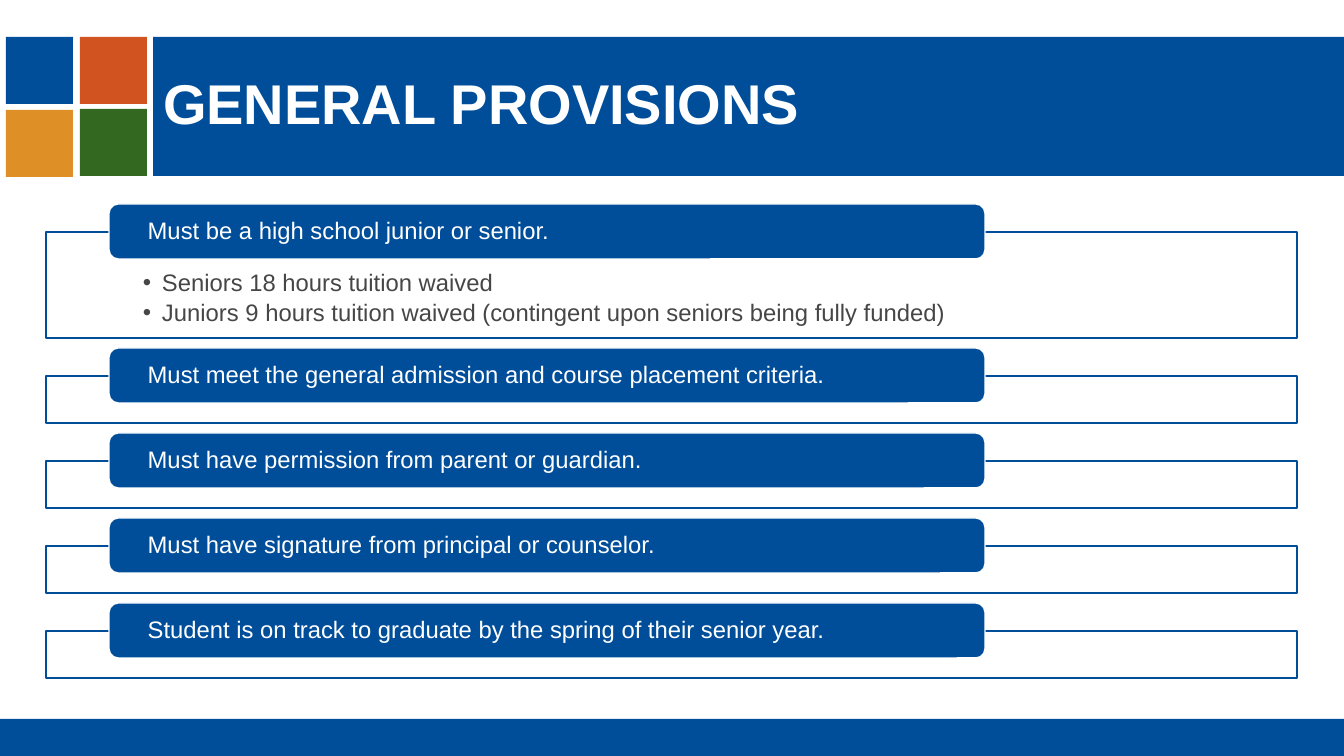
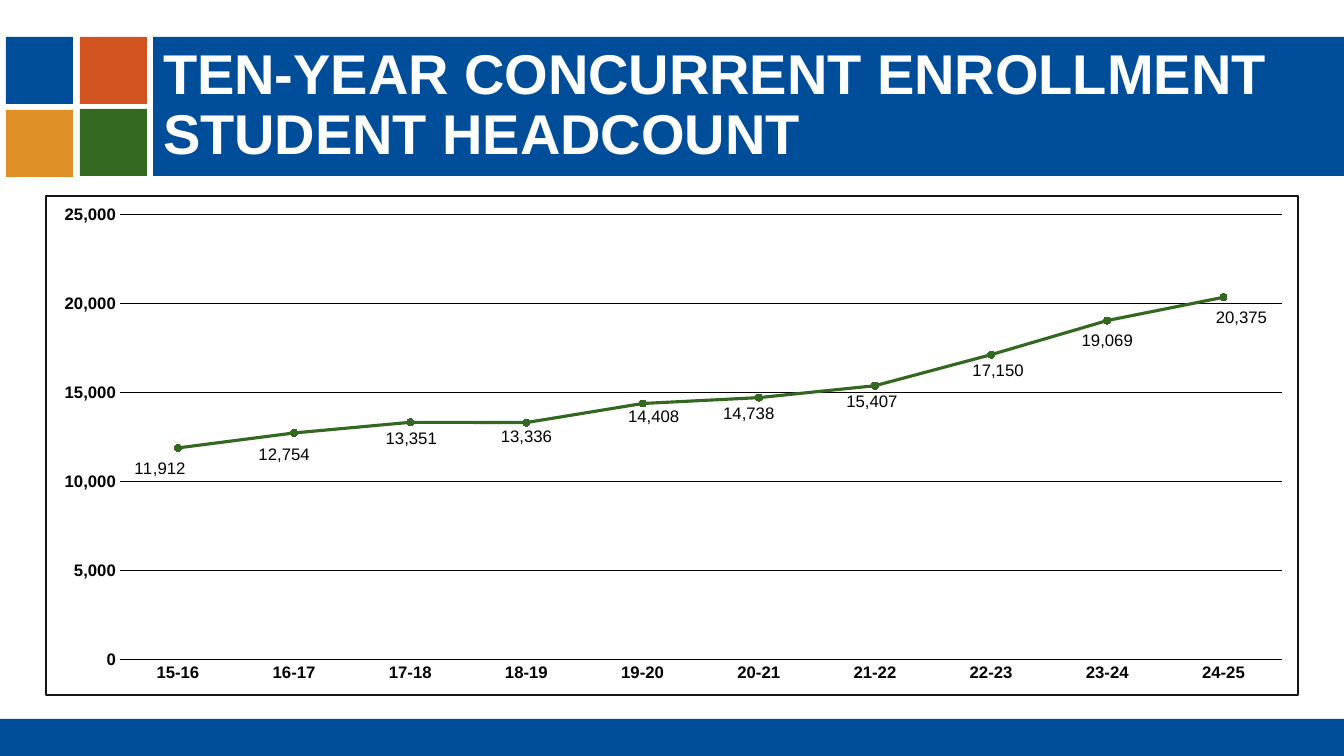
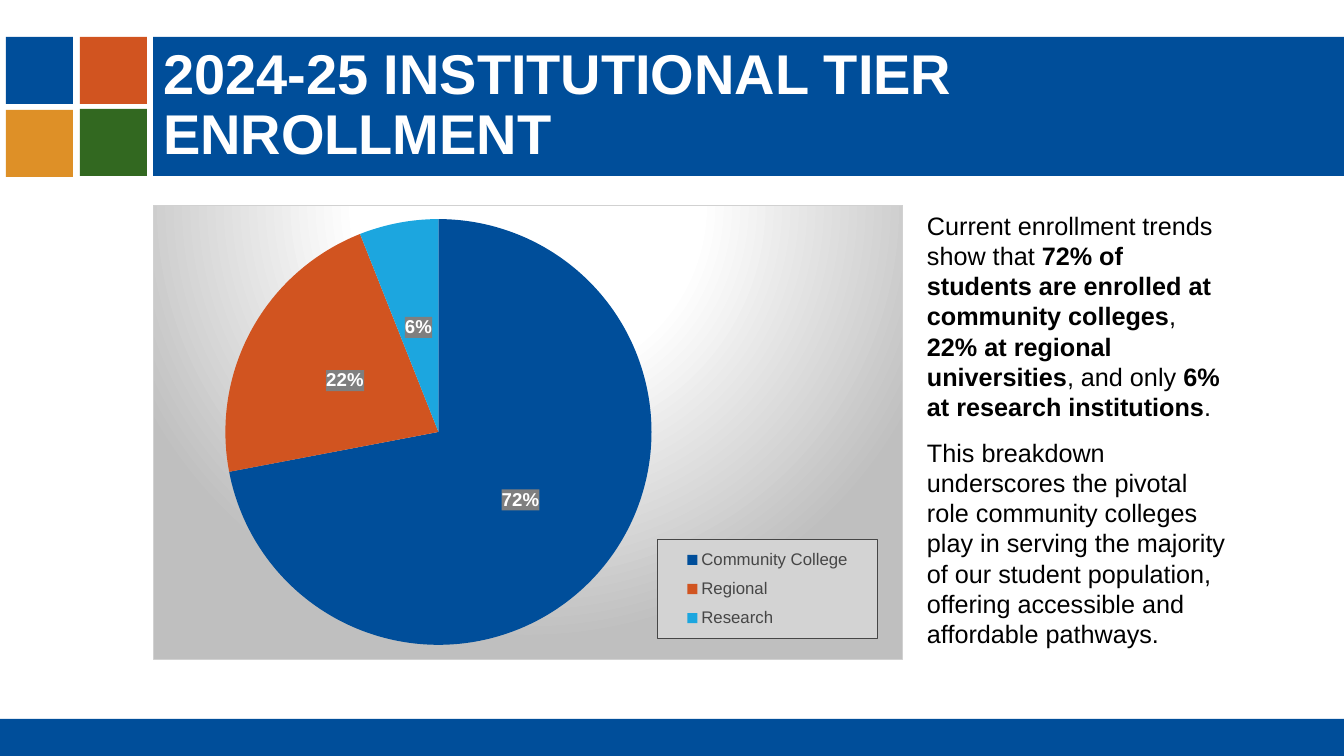
from pptx import Presentation
from pptx import util as u
from pptx.chart.data import CategoryChartData
from pptx.dml.color import RGBColor
from pptx.enum import chart as charts, shapes, text
from pptx.oxml import parse_xml
from pptx.oxml.ns import nsdecls, qn

PX = 9072  # EMU in one px; the slide is 1344 px wide
BLUE, ORANGE, GOLD, GREEN, SKY = "004E9A", "D15420", "DE9027", "326820", "1CA6DF"
WHITE, BLACK, GREY = "FFFFFF", "000000", "464646"
FONT = "Arial"
color = RGBColor.from_string


def paint(shape, fill, line=None):
    shape.shadow.inherit = False
    shape.fill.solid()
    shape.fill.fore_color.rgb = color(fill)
    if line:
        shape.line.color.rgb = color(line)
        shape.line.width = u.Pt(1)
    else:
        shape.line.fill.background()


def write(frame, *paragraphs, size, ink, bold=False, spacing=1.0, gap=0, indent=0,
          margins=(10, 5, 10, 5), anchor=text.MSO_ANCHOR.TOP):
    """Fill a text frame; ** in a paragraph switches bold on and off."""
    frame.word_wrap = True
    frame.auto_size = text.MSO_AUTO_SIZE.NONE
    frame.vertical_anchor = anchor
    (frame.margin_left, frame.margin_top,
     frame.margin_right, frame.margin_bottom) = [side * PX for side in margins]
    for number, content in enumerate(paragraphs):
        paragraph = frame.add_paragraph() if number else frame.paragraphs[0]
        if indent:
            properties = paragraph._p.get_or_add_pPr()
            properties.set("marL", str(indent * PX))
            properties.set("indent", str(-indent * PX))
        paragraph.alignment = text.PP_ALIGN.LEFT
        paragraph.line_spacing = spacing
        paragraph.space_before = u.Pt(gap if number else 0)
        for part, words in enumerate(content.split("**")):
            run = paragraph.add_run()
            run.text = words
            run.font.name, run.font.size = FONT, u.Pt(size)
            run.font.bold = bold or part % 2 == 1
            run.font.color.rgb = color(ink)


presentation = Presentation()
presentation.slide_width, presentation.slide_height = 1344 * PX, 756 * PX
master = presentation.slide_master
content_layout, title_layout = presentation.slide_layouts[1], presentation.slide_layouts[5]

# Slides and titles
slides = []
for layout, heading in (
    (content_layout, "GENERAL PROVISIONS"),
    (title_layout, "TEN-YEAR CONCURRENT ENROLLMENT STUDENT HEADCOUNT"),
    (title_layout, "2024-25 INSTITUTIONAL TIER ENROLLMENT"),
):
    slide = presentation.slides.add_slide(layout)
    title = slide.shapes.title
    title.left, title.top, title.width, title.height = 153 * PX, 37 * PX, 1191 * PX, 139 * PX
    paint(title, BLUE)
    write(title.text_frame, heading, size=40, ink=WHITE, bold=True, spacing=0.9,
          anchor=text.MSO_ANCHOR.MIDDLE)
    slides.append(slide)
provisions_slide, headcount_slide, tier_slide = slides

# Squares and footer band, moved to the master
for left, top, width, height, fill in (
    (6, 37, 67, 67, BLUE),
    (80, 37, 67, 67, ORANGE),
    (6, 110, 67, 67, GOLD),
    (80, 109, 67, 67, GREEN),
    (0, 719, 1344, 37, BLUE),
):
    block = provisions_slide.shapes.add_shape(
        shapes.MSO_SHAPE.RECTANGLE, left * PX, top * PX, width * PX, height * PX)
    paint(block, fill)
    master.shapes.element.append(block.element)

# General provisions: a bar on the top edge of each panel
bar_top = 204
for number, provision in enumerate((
    "Must be a high school junior or senior.",
    "Must meet the general admission and course placement criteria.",
    "Must have permission from parent or guardian.",
    "Must have signature from principal or counselor.",
    "Student is on track to graduate by the spring of their senior year.",
)):
    panel_top, panel_height = bar_top + 28, 47 if number else 106
    if number:
        panel = provisions_slide.shapes.add_shape(shapes.MSO_SHAPE.RECTANGLE, 0, 0, 0, 0)
    else:
        panel = provisions_slide.placeholders[1]
        write(panel.text_frame, "Seniors 18 hours tuition waived",
              "Juniors 9 hours tuition waived (contingent upon seniors being fully funded)",
              size=17, ink=GREY, spacing=0.9, gap=3, indent=19, margins=(97, 39, 97, 13))
    panel.left, panel.top = 46 * PX, panel_top * PX
    panel.width, panel.height = 1251 * PX, panel_height * PX
    paint(panel, WHITE, BLUE)
    bar = provisions_slide.shapes.add_shape(
        shapes.MSO_SHAPE.ROUNDED_RECTANGLE, 109 * PX, bar_top * PX, 876 * PX, 55 * PX)
    paint(bar, BLUE, WHITE)
    write(bar.text_frame, provision, size=17, ink=WHITE, spacing=0.9,
          margins=(36, 0, 36, 0), anchor=text.MSO_ANCHOR.MIDDLE)
    bar_top = panel_top + panel_height + 10

# Headcount line chart
headcount = CategoryChartData(number_format="#,##0")
headcount.categories = [f"{year}-{year + 1}" for year in range(15, 25)]
headcount.add_series("Series 1", (11912, 12754, 13351, 13336, 14408,
                                  14738, 15407, 17150, 19069, 20375))
line_chart = headcount_slide.shapes.add_chart(
    charts.XL_CHART_TYPE.LINE_MARKERS, 45 * PX, 195 * PX, 1254 * PX, 501 * PX, headcount).chart
value_axis, category_axis = line_chart.value_axis, line_chart.category_axis
value_axis.minimum_scale, value_axis.maximum_scale, value_axis.major_unit = 0, 25000, 5000
value_axis.tick_labels.number_format = "#,##0"
value_axis.tick_labels.number_format_is_linked = False
value_axis.format.line.fill.background()
for axis in (value_axis, category_axis):
    axis.major_tick_mark = axis.minor_tick_mark = charts.XL_TICK_MARK.NONE
    font = axis.tick_labels.font
    font.name, font.size, font.bold = FONT, u.Pt(12), True
    font.color.rgb = color(BLACK)
for line in (value_axis.major_gridlines.format.line, category_axis.format.line):
    line.color.rgb = color(BLACK)
    line.width = u.Pt(0.75)

series = line_chart.plots[0].series[0]
series.smooth = False
series.format.line.color.rgb = color(GREEN)
series.format.line.width = u.Pt(2.25)
series.marker.style, series.marker.size = charts.XL_MARKER_STYLE.CIRCLE, 5
series.marker.format.fill.solid()
series.marker.format.fill.fore_color.rgb = color(GREEN)
series.marker.format.line.color.rgb = color(GREEN)
label_shifts = ((-18, 5), (-10, 5), (1, 0), (0, -2), (11, -3),
                (-10, 0), (-3, 0), (7, 0), (0, 4), (18, 4))
for number in range(len(label_shifts)):
    label = series.points[number].data_label
    label.position = charts.XL_LABEL_POSITION.BELOW
    label.font.name, label.font.size = FONT, u.Pt(12)
    label.font.color.rgb = color(BLACK)
for label, (right, down) in zip(line_chart.element.iter(qn("c:dLbl")), label_shifts):
    label.find(qn("c:idx")).addnext(parse_xml(
        f'<c:layout {nsdecls("c")}><c:manualLayout><c:x val="{right / 1254:.4f}"/>'
        f'<c:y val="{down / 501:.4f}"/></c:manualLayout></c:layout>'))

# Institutional tier pie chart
tiers = CategoryChartData()
tiers.categories = ["Community College", "Regional", "Research"]
tiers.add_series("Series 1", (72, 22, 6))
pie_chart = tier_slide.shapes.add_chart(
    charts.XL_CHART_TYPE.PIE, 153 * PX, 205 * PX, 750 * PX, 455 * PX, tiers).chart
pie = pie_chart.plots[0]
pie.vary_by_categories = True
for number, fill in enumerate((BLUE, ORANGE, SKY)):
    slice_format = pie.series[0].points[number].format
    slice_format.fill.solid()
    slice_format.fill.fore_color.rgb = color(fill)
    slice_format.line.fill.background()
pie.has_data_labels = True
labels = pie.data_labels
labels.show_percentage, labels.show_value = True, False
labels.number_format, labels.number_format_is_linked = "0%", False
labels.position = charts.XL_LABEL_POSITION.CENTER
labels.font.name, labels.font.size, labels.font.bold = FONT, u.Pt(13.3), True
labels.font.color.rgb = color(WHITE)
pie_chart.has_legend = True
legend = pie_chart.legend
legend.position = charts.XL_LEGEND_POSITION.RIGHT
legend.include_in_layout = False
legend.font.name, legend.font.size = FONT, u.Pt(12)
legend.font.color.rgb = color(GREY)

# Frames and manual layouts of both charts
for chart, has_legend in ((line_chart, False), (pie_chart, True)):
    chart.has_title = False
    chart.has_legend = has_legend
    chart.font.name, chart.font.size = FONT, u.Pt(10)
    chart.font.color.rgb = color(GREY)
solid = '<a:solidFill><a:srgbClr val="{}"/></a:solidFill>'
glow = "".join(f'<a:gs pos="{stop * 1000}"><a:srgbClr val="{tone}"/></a:gs>'
               for stop, tone in ((0, WHITE), (39, WHITE), (100, "BFBFBF")))
gradient = (f'<a:gradFill><a:gsLst>{glow}</a:gsLst><a:path path="circle">'
            '<a:fillToRect l="50000" t="-80000" r="50000" b="180000"/></a:path></a:gradFill>')
for chart, previous, fill, edge, width in (
    (line_chart, "c:chart", solid.format(WHITE), solid.format("161616"), 1.5),
    (pie_chart, "c:chart", gradient, solid.format("D1D1D1"), 0.75),
    (pie_chart, "c:legend/c:overlay", solid.format("D3D3D3"), solid.format(GREY), 0.75),
    (pie_chart, "c:dLbls/c:numFmt", solid.format("7F7F7F"), "<a:noFill/>", 0.75),
):
    steps = "/".join(qn(step) for step in previous.split("/"))
    chart.element.find(".//" + steps).addnext(parse_xml(
        f'<c:spPr {nsdecls("c", "a")}>{fill}<a:ln w="{int(u.Pt(width))}">{edge}</a:ln></c:spPr>'))
for chart, part, place, box in (
    (line_chart, "c:plotArea", 0, (0.059, 0.038, 0.928, 0.892)),
    (pie_chart, "c:plotArea", 0, (0.096, 0.03, 0.569, 0.938)),
    (pie_chart, "c:legend", 1, (0.673, 0.736, 0.294, 0.218)),
):
    owner = chart.element.find(".//" + qn(part))
    for old_layout in owner.findall(qn("c:layout")):
        owner.remove(old_layout)
    inner = '<c:layoutTarget val="inner"/>' if part == "c:plotArea" else ""
    modes = '<c:xMode val="edge"/><c:yMode val="edge"/>'
    sides = "".join(f'<c:{side} val="{share}"/>' for side, share in zip("xywh", box))
    owner.insert(place, parse_xml(f'<c:layout {nsdecls("c")}><c:manualLayout>{inner}{modes}'
                                  f'{sides}</c:manualLayout></c:layout>'))

# Institutional tier commentary
commentary = tier_slide.shapes.add_textbox(917 * PX, 205 * PX, 321 * PX, 453 * PX)
write(commentary.text_frame,
      "Current enrollment trends show that **72% of students are enrolled at community colleges**, "
      "**22% at regional universities**, and only **6% at research institutions**.",
      "This breakdown underscores the pivotal role community colleges play in serving the majority "
      "of our student population, offering accessible and affordable pathways.",
      size=18, ink=BLACK, gap=11)

presentation.save("out.pptx")
